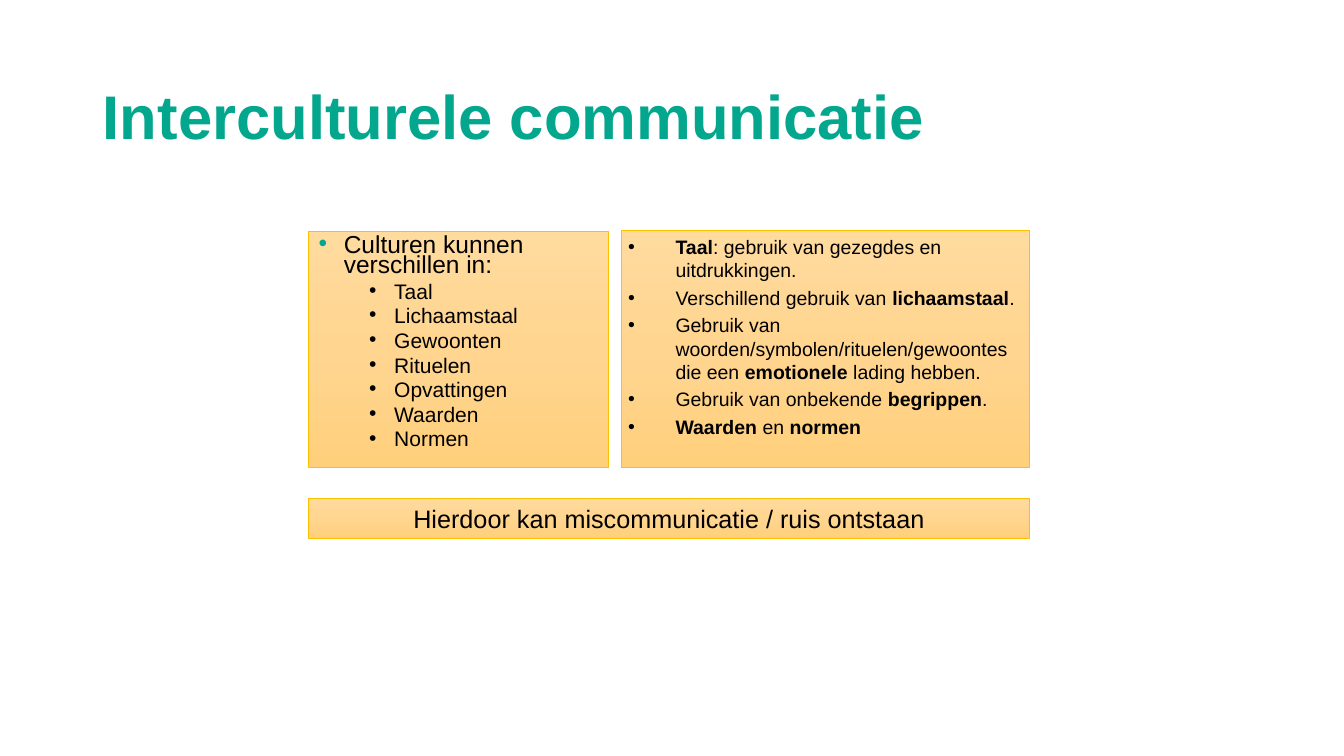
from copy import deepcopy

from lxml.etree import SubElement
from pptx import Presentation
from pptx.dml.color import RGBColor
from pptx.enum.shapes import MSO_SHAPE
from pptx.enum.text import MSO_ANCHOR, MSO_AUTO_SIZE, PP_ALIGN
from pptx.oxml.ns import qn
from pptx.util import Inches, Pt

TEAL = RGBColor(0x03, 0xA7, 0x8D)
BLACK = RGBColor(0, 0, 0)
GOLD = RGBColor(0xFF, 0xC0, 0x00)
PALE = RGBColor(0xFF, 0xDB, 0x9E)
PEACH = RGBColor(0xFF, 0xD5, 0x90)
AMBER = RGBColor(0xFF, 0xD0, 0x7C)


class Deck:
    font = "Arial"

    def __init__(self):
        self.prs = Presentation()
        self.prs.slide_width = Inches(13.33)
        self.prs.slide_height = Inches(7.5)
        self.slide = self.prs.slides.add_slide(self.prs.slide_layouts[1])

    def place(self, shape, left, top, width, height):
        shape.left, shape.top = Inches(left), Inches(top)
        shape.width, shape.height = Inches(width), Inches(height)

    def paint(self, shape):
        fill = shape.fill
        fill.gradient()
        fill.gradient_angle = 270
        stops = fill.gradient_stops
        for stop, color, spot in zip(stops, (PALE, AMBER), (0, 1)):
            stop.color.rgb = color
            stop.position = spot
        first = shape.element.spPr.find(qn("a:gradFill")).find(qn("a:gsLst"))[0]
        first.addnext(deepcopy(first))
        middle = fill.gradient_stops[1]
        middle.color.rgb = PEACH
        middle.position = 0.5
        shape.line.color.rgb = GOLD
        shape.line.width = Pt(0.5)

    def style(self, para, size, color=BLACK, bold=None):
        para.font.name = self.font
        para.font.size = Pt(size)
        para.font.color.rgb = color
        para.font.bold = bold

    def bullet(self, para, left, hang, color=BLACK):
        props = para._p.get_or_add_pPr()
        props.set("marL", str(Inches(left)))
        props.set("indent", str(-Inches(hang)))
        tint = SubElement(props, qn("a:buClr"))
        SubElement(tint, qn("a:srgbClr")).set("val", str(color))
        SubElement(props, qn("a:buFont")).set("typeface", self.font)
        SubElement(props, qn("a:buChar")).set("char", "•")

    def title(self, text, *area):
        shape = self.slide.shapes.title
        self.place(shape, *area)
        frame = shape.text_frame
        frame.text = text
        frame.auto_size = MSO_AUTO_SIZE.NONE
        frame.vertical_anchor = MSO_ANCHOR.MIDDLE
        para = frame.paragraphs[0]
        para.alignment = PP_ALIGN.LEFT
        para.line_spacing = 0.9
        self.style(para, 44, TEAL, True)

    def outline(self, head, items, *area):
        shape = self.slide.placeholders[1]
        self.place(shape, *area)
        self.paint(shape)
        frame = shape.text_frame
        frame.text = "\n".join([head, *items])
        frame.auto_size = MSO_AUTO_SIZE.NONE
        for i, para in enumerate(frame.paragraphs):
            para.level = 1 if i else 0
            para.line_spacing = 0.7
            para.space_before = Pt(5 if i else 0)
            self.bullet(para, 0.75 if i else 0.25, 0.25, BLACK if i else TEAL)
            self.style(para, 15 if i else 17.5)

    def box(self, *area):
        shape = self.slide.shapes.add_shape(MSO_SHAPE.RECTANGLE, 0, 0, 0, 0)
        self.place(shape, *area)
        self.paint(shape)
        shape.shadow.inherit = False
        shape.text_frame.word_wrap = True
        return shape.text_frame

    def points(self, items, *area):
        frame = self.box(*area)
        frame.vertical_anchor = MSO_ANCHOR.TOP
        frame.margin_left = frame.margin_right = Inches(0.07)
        frame.margin_top = frame.margin_bottom = Inches(0.04)
        for i, item in enumerate(items):
            para = frame.add_paragraph() if i else frame.paragraphs[0]
            para.alignment = PP_ALIGN.LEFT
            para.space_before = Pt(3 if i else 0)
            self.bullet(para, 0.47, 0.47)
            self.style(para, 13.9)
            for j, part in enumerate(item.split("*")):
                if part:
                    run = para.add_run()
                    run.text = part
                    run.font.bold = j % 2 == 1

    def banner(self, text, *area):
        frame = self.box(*area)
        frame.text = text
        frame.vertical_anchor = MSO_ANCHOR.MIDDLE
        para = frame.paragraphs[0]
        para.alignment = PP_ALIGN.CENTER
        self.style(para, 18)


def main():
    deck = Deck()
    deck.title("Interculturele communicatie", 0.92, 0.79, 11.5, 0.79)
    deck.outline(
        "Culturen kunnen verschillen in:",
        ["Taal", "Lichaamstaal", "Gewoonten", "Rituelen",
         "Opvattingen", "Waarden", "Normen"],
        3.06, 2.3, 2.97, 2.34)
    deck.points(
        ["*Taal*: gebruik van gezegdes en uitdrukkingen.",
         "Verschillend gebruik van *lichaamstaal*.",
         "Gebruik van woorden/symbolen/rituelen/gewoontes "
         "die een *emotionele* lading hebben.",
         "Gebruik van onbekende *begrippen*.",
         "*Waarden *en *normen*"],
        6.16, 2.29, 4.05, 2.35)
    deck.banner("Hierdoor kan miscommunicatie / ruis ontstaan",
                3.06, 4.94, 7.15, 0.4)
    deck.prs.save("out.pptx")


if __name__ == "__main__":
    main()
